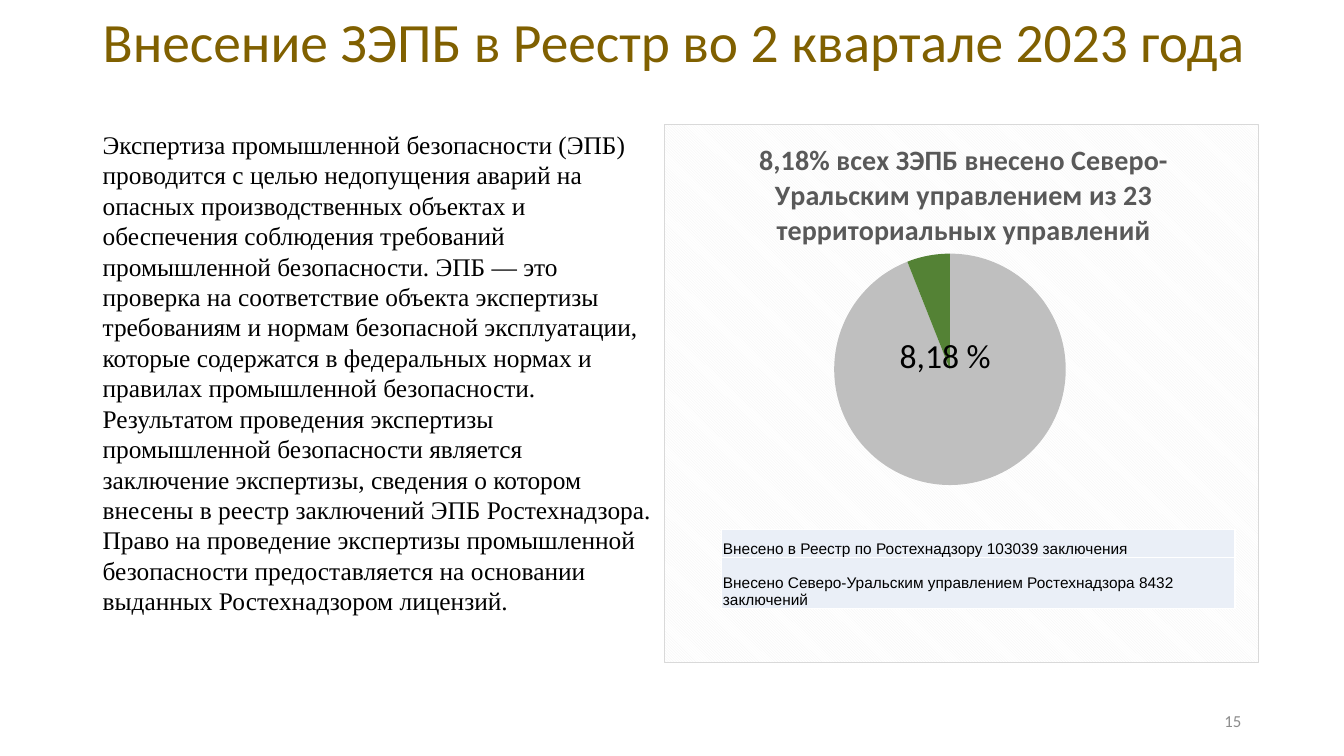
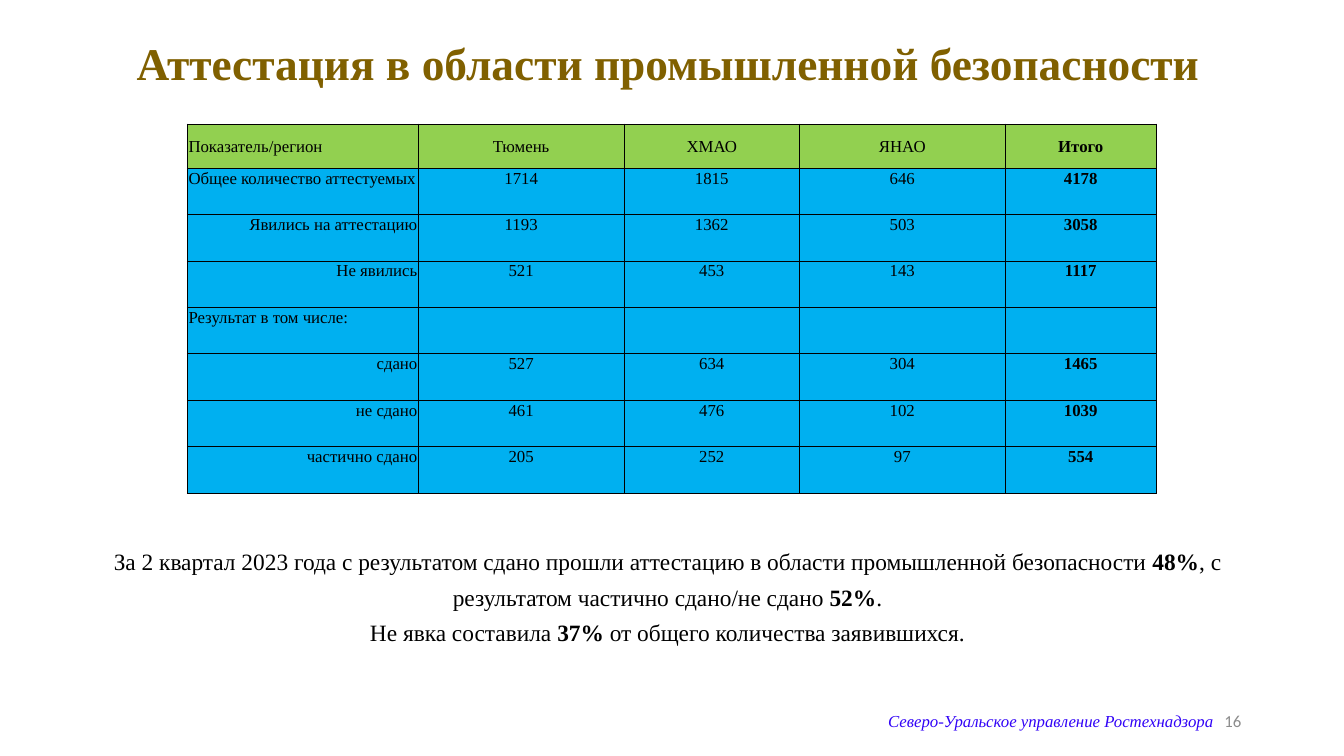
from dataclasses import dataclass

from lxml.etree import SubElement
from pptx import Presentation
from pptx.chart.data import CategoryChartData
from pptx.dml.color import RGBColor
from pptx.enum.chart import XL_CHART_TYPE, XL_LABEL_POSITION
from pptx.enum.text import MSO_ANCHOR, PP_ALIGN
from pptx.oxml import parse_xml
from pptx.oxml.ns import nsdecls, qn
from pptx.util import Emu, Pt

EMU_PER_PX = 9144
LEFT, CENTER, RIGHT = PP_ALIGN.LEFT, PP_ALIGN.CENTER, PP_ALIGN.RIGHT
TOP, MIDDLE, BOTTOM = MSO_ANCHOR.TOP, MSO_ANCHOR.MIDDLE, MSO_ANCHOR.BOTTOM


@dataclass(frozen=True)
class Theme:
    serif: str = "Times New Roman"
    sans: str = "Calibri"
    plain: str = "Arial"
    ink: str = "000000"
    paper: str = "FFFFFF"
    gold: str = "806000"
    page_gray: str = "8C8C8C"
    office_blue: str = "3103F7"
    chart_title: str = "595959"
    chart_hatch: str = "F2F2F2"
    chart_border: str = "D9D9D9"
    pie_rest: str = "BFBFBF"
    pie_share: str = "548235"
    note_fill: str = "EAEFF7"
    header_fill: str = "92D050"
    row_fill: str = "00B0F0"
    wide_title_size: float = 39.6
    title_size: float = 32.4
    body_size: float = 18.1
    summary_size: float = 16.7
    chart_title_size: float = 20
    share_size: float = 24
    chart_size: float = 10
    small_size: float = 12
    note_size: float = 11


THEME = Theme()


def px(length):
    return Emu(length * EMU_PER_PX)


def write(frame, text, font=THEME.serif, size=THEME.small_size, color=THEME.ink,
          bold=False, italic=False, align=LEFT, spacing=None, before=0):
    paragraph = frame.add_paragraph() if frame.text else frame.paragraphs[0]
    paragraph.alignment = align
    paragraph.space_before = Pt(before)
    if spacing:
        paragraph.line_spacing = spacing
    for position, piece in enumerate(text.split("*")):
        if not piece:
            continue
        run = paragraph.add_run()
        run.text = piece
        run.font.name = font
        run.font.size = Pt(size)
        run.font.bold = bold or position % 2 == 1
        run.font.italic = italic
        run.font.color.rgb = RGBColor.from_string(color)


def set_layout(parent, index, **values):
    for existing in parent.findall(qn("c:layout")):
        parent.remove(existing)
    layout = parse_xml(f"<c:layout {nsdecls('c')}><c:manualLayout/></c:layout>")
    for tag, value in values.items():
        SubElement(layout[0], qn(f"c:{tag}")).set("val", str(value))
    parent.insert(index, layout)


def set_borders(cell, color, **widths):
    properties = cell._tc.get_or_add_tcPr()
    for side, width in widths.items():
        properties.append(parse_xml(
            f'<a:ln{side} {nsdecls("a")} w="{Pt(width)}"><a:solidFill>'
            f'<a:srgbClr val="{color}"/></a:solidFill></a:ln{side}>'))


class Deck:
    def __init__(self, theme):
        self.theme = theme
        self.presentation = Presentation()
        self.presentation.slide_width = px(1333)
        self.presentation.slide_height = px(750)
        self.slide = None

    def start(self, number):
        blank = self.presentation.slide_layouts[6]
        self.slide = self.presentation.slides.add_slide(blank)
        self.text((941, 695, 300, 40), str(number), anchor=MIDDLE,
                  font=self.theme.sans, color=self.theme.page_gray, align=RIGHT)

    def text(self, place, *paragraphs, anchor=TOP, **style):
        frame = self.slide.shapes.add_textbox(*map(px, place)).text_frame
        frame.word_wrap = True
        frame.vertical_anchor = anchor
        for paragraph in paragraphs:
            text, own = paragraph if isinstance(paragraph, tuple) else (paragraph, {})
            write(frame, text, **{**style, **own})

    def title(self, place, text, **style):
        self.text(place, text, anchor=MIDDLE, color=self.theme.gold,
                  spacing=0.9, **style)

    def footer(self, text):
        self.text((871, 690, 352, 50), text, anchor=MIDDLE,
                  color=self.theme.office_blue, italic=True)

    def table(self, left, top, widths, heights, fill_cell, color, inner, outer):
        rows, columns = len(heights), len(widths)
        table = self.slide.shapes.add_table(
            rows, columns, px(left), px(top), px(sum(widths)), px(sum(heights))).table
        table.first_row = table.horz_banding = False
        for column, width in zip(table.columns, widths):
            column.width = px(width)
        for row, height in zip(table.rows, heights):
            row.height = px(height)
        for r in range(rows):
            for c in range(columns):
                cell = table.cell(r, c)
                cell.margin_left = cell.margin_right = cell.margin_top = px(1)
                cell.margin_bottom = 0
                set_borders(cell, color,
                            L=inner if c else outer,
                            R=inner if c < columns - 1 else outer,
                            T=inner,
                            B=inner if r < rows - 1 else outer)
                text, fill, anchor, style = fill_cell(r, c)
                cell.fill.solid()
                cell.fill.fore_color.rgb = RGBColor.from_string(fill)
                cell.vertical_anchor = anchor
                write(cell.text_frame, text, **style)

    def pie(self, place, title, values, colors, share):
        theme = self.theme
        data = CategoryChartData()
        data.categories = [str(n + 1) for n in range(len(values))]
        data.add_series("Series 1", values)
        chart = self.slide.shapes.add_chart(
            XL_CHART_TYPE.PIE, *map(px, place), data).chart
        chart.has_legend = False
        chart.font.name = theme.sans
        chart.font.size = Pt(theme.chart_size)
        chart.font.color.rgb = RGBColor.from_string(theme.ink)

        chart.has_title = True
        write(chart.chart_title.text_frame, title, font=theme.sans, bold=True,
              size=theme.chart_title_size, color=theme.chart_title, align=CENTER)
        chart.chart_title.include_in_layout = False

        plot = chart.plots[0]
        plot.vary_by_categories = False
        series = plot.series[0]
        for index, color in enumerate(colors):
            sector = series.points[index].format
            sector.fill.solid()
            sector.fill.fore_color.rgb = RGBColor.from_string(color)
            sector.line.fill.background()
        series.data_labels.show_value = False
        label = series.points[1].data_label
        write(label.text_frame, share, font=theme.sans, size=theme.share_size)
        label.position = XL_LABEL_POSITION.INSIDE_END
        for leader in series._element.iter(qn("c:showLeaderLines")):
            leader.set("val", "0")

        space = chart._chartSpace
        set_layout(next(space.iter(qn("c:title"))), 1,
                   xMode="edge", yMode="edge", x=0.15, y=0.02)
        set_layout(next(space.iter(qn("c:plotArea"))), 0,
                   layoutTarget="inner", xMode="edge", yMode="edge",
                   x=0.11, y=0.24, w=0.74, h=0.43)
        set_layout(next(space.iter(qn("c:dLbl"))), 1, x=-0.05, y=0.14)
        space.find(qn("c:chart")).addnext(parse_xml(
            f'<c:spPr {nsdecls("c", "a")}><a:pattFill prst="dkDnDiag">'
            f'<a:fgClr><a:srgbClr val="{theme.chart_hatch}"/></a:fgClr>'
            f'<a:bgClr><a:srgbClr val="{theme.paper}"/></a:bgClr></a:pattFill>'
            f'<a:ln w="{Pt(0.75)}"><a:solidFill><a:srgbClr val="{theme.chart_border}"/>'
            f'</a:solidFill></a:ln></c:spPr>'))


EXPERTISE = (
    "Экспертиза промышленной безопасности (ЭПБ) проводится с целью недопущения "
    "аварий на опасных производственных объектах и обеспечения соблюдения "
    "требований промышленной безопасности. ЭПБ — это проверка на соответствие "
    "объекта экспертизы требованиям и нормам безопасной эксплуатации, которые "
    "содержатся в федеральных нормах и правилах промышленной безопасности. "
    "Результатом проведения экспертизы промышленной безопасности является "
    "заключение экспертизы, сведения о котором внесены в реестр заключений ЭПБ "
    "Ростехнадзора. Право на проведение экспертизы промышленной безопасности "
    "предоставляется на основании выданных Ростехнадзором лицензий.")

REGISTRY_NOTES = [
    "Внесено в Реестр по Ростехнадзору 103039 заключения",
    "Внесено Северо-Уральским управлением Ростехнадзора 8432 заключений",
]

ATTESTATION = [
    ("Показатель/регион", "Тюмень", "ХМАО", "ЯНАО", "Итого"),
    ("Общее количество аттестуемых", "1714", "1815", "646", "4178"),
    ("Явились на аттестацию", "1193", "1362", "503", "3058"),
    ("Не явились", "521", "453", "143", "1117"),
    ("Результат в том числе:", "", "", "", ""),
    ("сдано", "527", "634", "304", "1465"),
    ("не сдано", "461", "476", "102", "1039"),
    ("частично сдано", "205", "252", "97", "554"),
]
GROUP_ROWS = (0, 1, 4)


def registry_cell(row, column):
    style = {"font": THEME.plain, "size": THEME.note_size}
    return REGISTRY_NOTES[row], THEME.note_fill, BOTTOM, style


def attestation_cell(row, column):
    label_align = LEFT if row in GROUP_ROWS else RIGHT
    style = {"align": CENTER if column else label_align, "bold": column == 4}
    fill, anchor = (THEME.row_fill, TOP) if row else (THEME.header_fill, MIDDLE)
    return ATTESTATION[row][column], fill, anchor, style


def registry_slide(deck):
    deck.start(15)
    deck.title((92, 7, 1181, 75), "Внесение ЗЭПБ в Реестр во 2 квартале 2023 года",
               font=THEME.sans, size=THEME.wide_title_size)
    deck.text((92, 123, 567, 553), EXPERTISE, size=THEME.body_size, spacing=1.0)
    deck.pie((659, 123, 590, 535),
             "8,18% всех ЗЭПБ внесено Северо-Уральским управлением "
             "из 23 территориальных управлений",
             (94, 6), (THEME.pie_rest, THEME.pie_share), "8,18 %")
    deck.table(716, 525, [509], [28, 51], registry_cell, THEME.paper, 1, 1)


def attestation_slide(deck):
    deck.start(16)
    deck.title((52, 39, 1221, 52), "Аттестация в области промышленной безопасности",
               size=THEME.title_size, bold=True, align=CENTER)
    deck.table(186, 123, [229, 204, 174, 204, 150], [44] + [46] * 6 + [47],
               attestation_cell, THEME.ink, 0.5, 1)
    deck.text((100, 530, 1124, 120),
              ("За 2 квартал 2023 года с результатом сдано прошли аттестацию в области "
               "промышленной безопасности *48%*, с результатом частично сдано/не сдано "
               "*52%*.", {"spacing": 1.28}),
              ("Не явка составила *37% *от общего количества заявившихся.",
               {"spacing": 0.7, "before": 10.5}),
              size=THEME.summary_size, align=CENTER)
    deck.footer("Северо-Уральское управление Ростехнадзора")


def main():
    deck = Deck(THEME)
    registry_slide(deck)
    attestation_slide(deck)
    deck.presentation.save("out.pptx")


if __name__ == "__main__":
    main()
